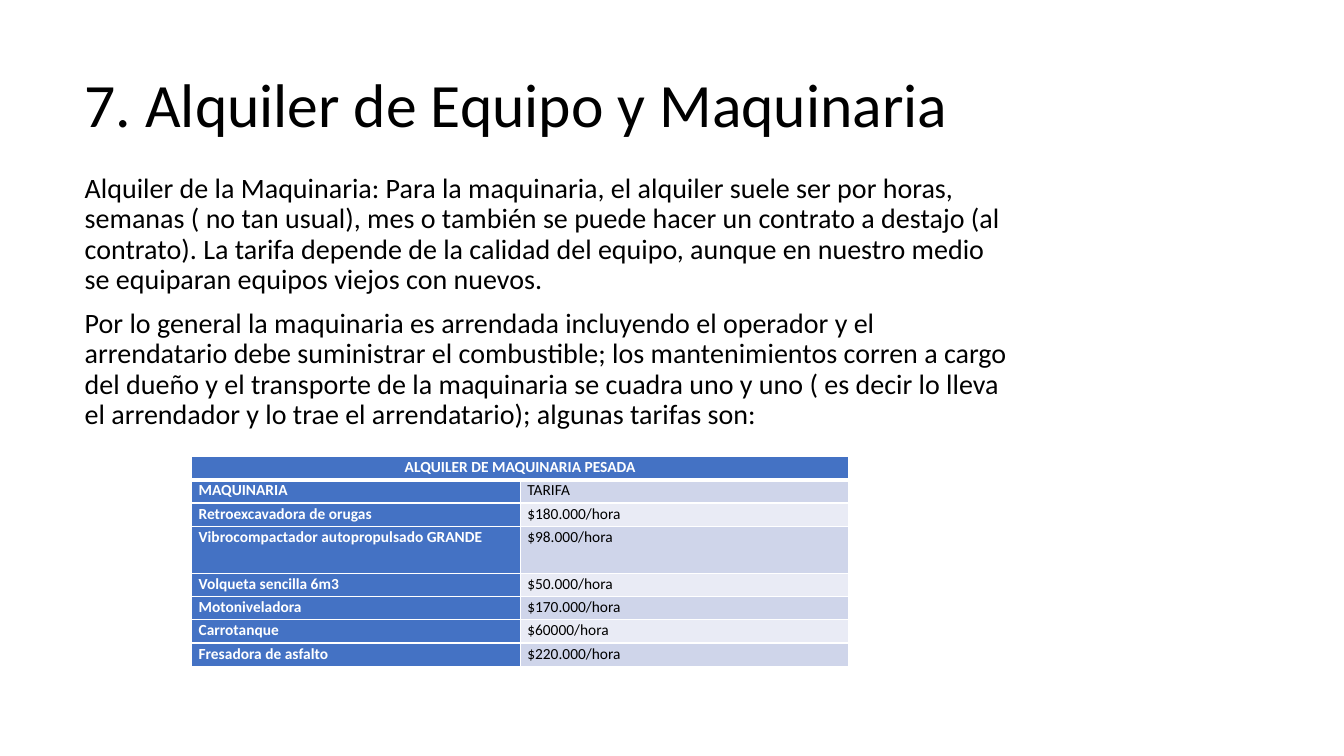
"""Build the slide on equipment and machinery rental."""
import dataclasses

import lxml.etree
import pptx
import pptx.dml.color
import pptx.enum.text
import pptx.oxml.ns
import pptx.shapes.placeholder
import pptx.slide
import pptx.table
import pptx.text.text
import pptx.util

PX = 9144
FONT = "Calibri"
BLACK = pptx.dml.color.RGBColor(0x00, 0x00, 0x00)
WHITE = pptx.dml.color.RGBColor(0xFF, 0xFF, 0xFF)
BLUE = pptx.dml.color.RGBColor(0x44, 0x72, 0xC4)
BANDS = (
    pptx.dml.color.RGBColor(0xE9, 0xEB, 0xF5),
    pptx.dml.color.RGBColor(0xCF, 0xD5, 0xEA),
)
ALIGN = pptx.enum.text.PP_ALIGN
ANCHOR = pptx.enum.text.MSO_ANCHOR

TITLE = "7. Alquiler de Equipo y Maquinaria"
BODY = (
    "Alquiler de la Maquinaria: Para la maquinaria, el alquiler suele ser por horas, "
    "semanas ( no tan usual), mes o también se puede hacer un contrato a destajo (al "
    "contrato). La tarifa depende de la calidad del equipo, aunque en nuestro medio "
    "se equiparan equipos viejos con nuevos.",
    "Por lo general la maquinaria es arrendada incluyendo el operador y el "
    "arrendatario debe suministrar el combustible; los mantenimientos corren a cargo "
    "del dueño y el transporte de la maquinaria se cuadra uno y uno ( es decir lo lleva "
    "el arrendador y lo trae el arrendatario); algunas tarifas son:",
)
TABLE_TITLE = "ALQUILER DE MAQUINARIA PESADA"


@dataclasses.dataclass(frozen=True)
class Area:
    """A rectangle in px."""

    left: int
    top: int
    width: int
    height: int

    def emu(self) -> tuple[int, int, int, int]:
        """Return the rectangle in EMU."""
        return self.left * PX, self.top * PX, self.width * PX, self.height * PX


@dataclasses.dataclass(frozen=True)
class Style:
    """The look of a paragraph."""

    size: int
    color: pptx.dml.color.RGBColor = BLACK
    bold: bool = False
    align: ALIGN = ALIGN.LEFT
    line: float = 0.9
    before: int = 0
    after: int = 0


@dataclasses.dataclass(frozen=True)
class Rate:
    """A machine and its rental rate."""

    machine: str
    price: str
    height: int = 23


RATES = (
    Rate("MAQUINARIA", "TARIFA"),
    Rate("Retroexcavadora de orugas", "$180.000/hora"),
    Rate("Vibrocompactador autopropulsado GRANDE", "$98.000/hora", 47),
    Rate("Volqueta sencilla 6m3", "$50.000/hora"),
    Rate("Motoniveladora", "$170.000/hora"),
    Rate("Carrotanque", "$60000/hora"),
    Rate("Fresadora de asfalto", "$220.000/hora"),
)

TITLE_AREA = Area(74, 67, 940, 80)
BODY_AREA = Area(74, 168, 940, 493)
TABLE_AREA = Area(190, 453, 652, 208)
HEADER_HEIGHT = 23

TITLE_STYLE = Style(44)
BODY_STYLE = Style(20, before=10)
PRICE_STYLE = Style(11, line=1.07, after=8)
MACHINE_STYLE = dataclasses.replace(PRICE_STYLE, color=WHITE, bold=True)
HEADER_STYLE = dataclasses.replace(MACHINE_STYLE, align=ALIGN.CENTER)


def write(para: pptx.text.text._Paragraph, text: str, style: Style) -> None:
    """Add one styled run to a paragraph."""
    para.alignment = style.align
    para.line_spacing = style.line
    para.space_before = pptx.util.Pt(style.before)
    para.space_after = pptx.util.Pt(style.after)
    span = para.add_run()
    span.text = text
    span.font.name = FONT
    span.font.size = pptx.util.Pt(style.size)
    span.font.bold = style.bold
    span.font.color.rgb = style.color


def fill_placeholder(
    box: pptx.shapes.placeholder.SlidePlaceholder,
    area: Area,
    texts: tuple[str, ...],
    style: Style,
    anchor: ANCHOR,
) -> None:
    """Place a placeholder and write its paragraphs without bullets."""
    box.left, box.top, box.width, box.height = area.emu()
    frame = box.text_frame
    frame.auto_size = pptx.enum.text.MSO_AUTO_SIZE.NONE
    frame.vertical_anchor = anchor
    for index, text in enumerate(texts):
        para = frame.add_paragraph() if index else frame.paragraphs[0]
        write(para, text, style)
        properties = para._p.get_or_add_pPr()
        properties.set("marL", "0")
        properties.set("indent", "0")
        lxml.etree.SubElement(properties, pptx.oxml.ns.qn("a:buNone"))


def draw_borders(cell: pptx.table._Cell, top: int, bottom: int) -> None:
    """Give a cell white borders, with widths in points."""
    properties = cell._tc.get_or_add_tcPr()
    for side, width in (("L", 1), ("R", 1), ("T", top), ("B", bottom)):
        line = lxml.etree.SubElement(properties, pptx.oxml.ns.qn(f"a:ln{side}"))
        line.set("w", str(pptx.util.Pt(width)))
        solid = lxml.etree.SubElement(line, pptx.oxml.ns.qn("a:solidFill"))
        color = lxml.etree.SubElement(solid, pptx.oxml.ns.qn("a:srgbClr"))
        color.set("val", str(WHITE))


def fill_cell(
    cell: pptx.table._Cell,
    text: str,
    style: Style,
    fill: pptx.dml.color.RGBColor,
    top: int = 1,
    bottom: int = 1,
) -> None:
    """Write and colour one table cell."""
    cell.margin_left = cell.margin_right = 7 * PX
    cell.margin_top = cell.margin_bottom = 0
    draw_borders(cell, top, bottom)
    cell.fill.solid()
    cell.fill.fore_color.rgb = fill
    write(cell.text_frame.paragraphs[0], text, style)


def add_rates(page: pptx.slide.Slide) -> None:
    """Add the table of rental rates."""
    table = page.shapes.add_table(len(RATES) + 1, 2, *TABLE_AREA.emu()).table
    table.first_col = True
    table.rows[0].height = HEADER_HEIGHT * PX
    header = table.cell(0, 0)
    header.merge(table.cell(0, 1))
    fill_cell(header, TABLE_TITLE, HEADER_STYLE, BLUE, bottom=3)
    draw_borders(table.cell(0, 1), 1, 3)
    for row, rate in enumerate(RATES, start=1):
        table.rows[row].height = rate.height * PX
        top = 3 if row == 1 else 1
        fill_cell(table.cell(row, 0), rate.machine, MACHINE_STYLE, BLUE, top)
        fill_cell(table.cell(row, 1), rate.price, PRICE_STYLE, BANDS[row % 2], top)


def main() -> None:
    """Build and save the deck."""
    deck = pptx.Presentation()
    deck.slide_width = 1333 * PX
    deck.slide_height = 750 * PX
    page = deck.slides.add_slide(deck.slide_layouts[1])
    title, body = page.placeholders
    fill_placeholder(title, TITLE_AREA, (TITLE,), TITLE_STYLE, ANCHOR.MIDDLE)
    fill_placeholder(body, BODY_AREA, BODY, BODY_STYLE, ANCHOR.TOP)
    add_rates(page)
    deck.save("out.pptx")


if __name__ == "__main__":
    main()
